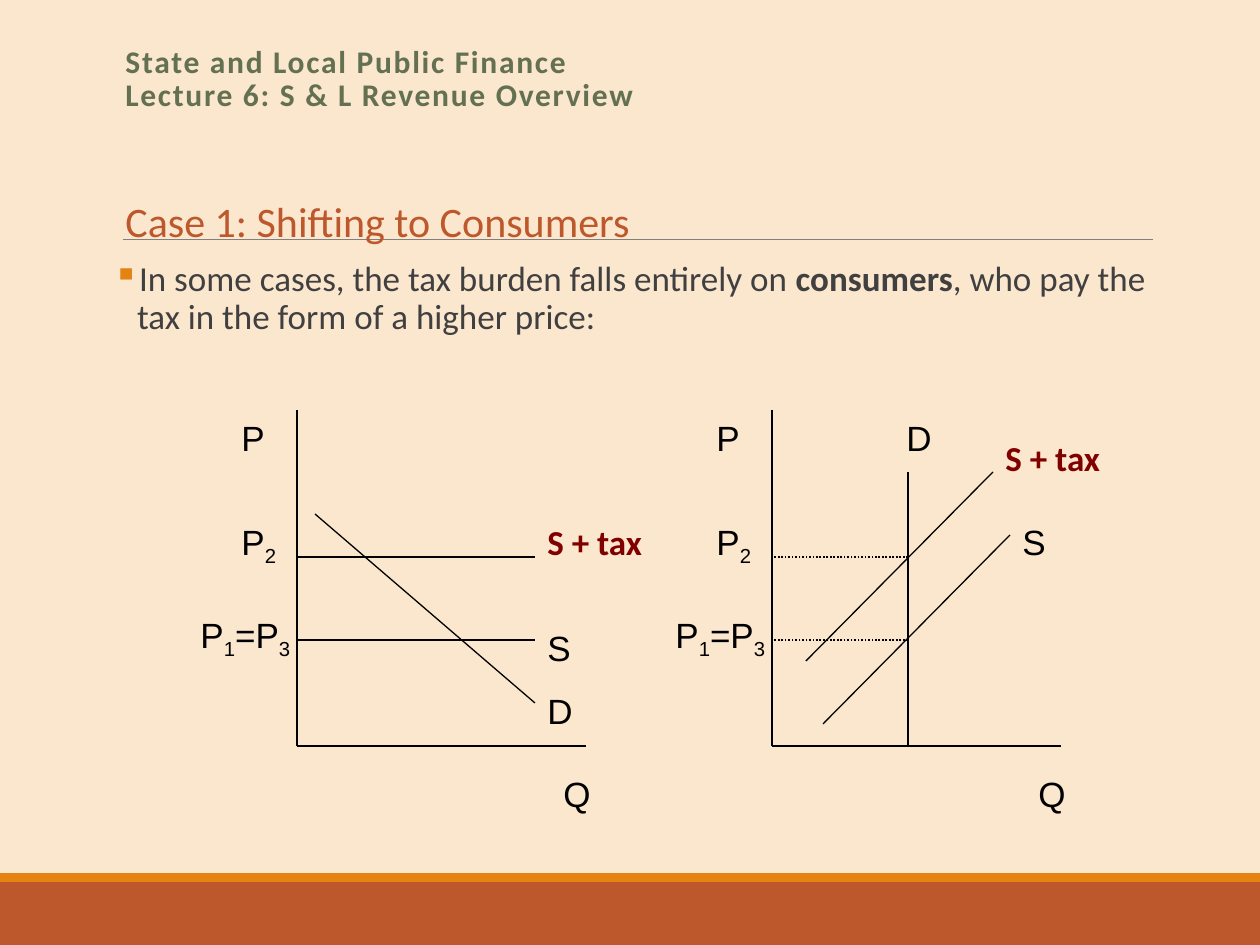
from dataclasses import dataclass

from lxml import etree
from pptx import Presentation
from pptx.dml.color import RGBColor
from pptx.enum import dml, shapes, text
from pptx.oxml import ns
from pptx.util import Emu, Pt

EMU_PER_PX = 914400 / 126
WIDTH, HEIGHT = 1260, 945


@dataclass(frozen=True)
class Theme:
    background: str = "FBE6CE"
    footer: str = "BD582C"
    accent: str = "E48312"
    rule: str = "808080"
    course: str = "637052"
    heading: str = "BD582C"
    body: str = "404040"
    ink: str = "000000"
    tax: str = "800000"
    prose_font: str = "Calibri"
    graph_font: str = "Arial"
    course_size: int = 18
    heading_size: int = 24
    body_size: int = 20
    label_size: int = 20


THEME = Theme()
P1_P3 = [("P", {}), ("1", {"sub": True}), ("=P", {}), ("3", {"sub": True})]
P2 = [("P", {}), ("2", {"sub": True})]


def px(length):
    return Emu(round(length * EMU_PER_PX))


def rgb(value):
    return RGBColor.from_string(value)


def add_band(slide, top, height, color):
    band = slide.shapes.add_shape(
        shapes.MSO_SHAPE.RECTANGLE, 0, px(top), px(WIDTH), px(height))
    band.shadow.inherit = False
    band.fill.solid()
    band.fill.fore_color.rgb = rgb(color)
    band.line.fill.background()


def add_line(slide, start, end, color=THEME.ink, width=0.75, dotted=False):
    line = slide.shapes.add_connector(
        shapes.MSO_CONNECTOR.STRAIGHT, *map(px, (*start, *end)))
    line.line.color.rgb = rgb(color)
    line.line.width = Pt(width)
    if dotted:
        line.line.dash_style = dml.MSO_LINE.ROUND_DOT
    etree.SubElement(line._element.spPr, ns.qn("a:effectLst"))


def add_text(slide, box, runs, size=THEME.label_size, color=THEME.ink,
             font=THEME.graph_font, bold=False, tracking=0, wrap=True,
             line_spacing=None, side_inset=None):
    frame = slide.shapes.add_textbox(*map(px, box)).text_frame
    frame.word_wrap = wrap
    frame.vertical_anchor = text.MSO_ANCHOR.TOP
    if side_inset is not None:
        frame.margin_left = frame.margin_right = px(side_inset)
    paragraph = frame.paragraphs[0]
    if line_spacing:
        paragraph.line_spacing = line_spacing
    for content, style in [(runs, {})] if isinstance(runs, str) else runs:
        for index, words in enumerate(content.split("\n")):
            if index:
                paragraph.add_line_break()
            run = paragraph.add_run()
            run.text = words
            run.font.size = Pt(size)
            run.font.name = font
            run.font.color.rgb = rgb(color)
            run.font.bold = style.get("bold", bold)
            if tracking:
                run._r.get_or_add_rPr().set("spc", str(tracking))
            if style.get("sub"):
                run._r.get_or_add_rPr().set("baseline", "-25000")
    return paragraph


def add_bullet(paragraph, mark, color, indent):
    properties = paragraph._p.get_or_add_pPr()
    properties.set("marL", str(px(indent)))
    properties.set("indent", str(-px(indent)))
    tint = etree.SubElement(properties, ns.qn("a:buClr"))
    etree.SubElement(tint, ns.qn("a:srgbClr")).set("val", color)
    etree.SubElement(properties, ns.qn("a:buChar")).set("char", mark)


def add_tax_label(slide, left, top):
    add_text(slide, (left, top, 136, 64), "S + tax", color=THEME.tax,
             font=THEME.prose_font, bold=True)


def add_axes(slide, origin):
    add_line(slide, (origin, 410), (origin, 746))
    add_line(slide, (origin, 746), (origin + 289, 746))
    add_text(slide, (origin - 68, 410, 50, 84), "P")
    add_text(slide, (origin + 254, 766, 50, 84), "Q")
    add_text(slide, (origin - 68, 514, 68, 63), P2)
    add_text(slide, (origin - 109, 607, 136, 63), P1_P3)


def add_flat_supply_graph(slide, origin):
    add_axes(slide, origin)
    for price in (557, 640):
        add_line(slide, (origin, price), (origin + 238, price))
    add_line(slide, (origin + 18, 514), (origin + 238, 703))
    add_tax_label(slide, origin + 238, 514)
    for name, top in (("S", 620), ("D", 683)):
        add_text(slide, (origin + 238, top, 84, 63), name)


def add_fixed_demand_graph(slide, origin):
    add_axes(slide, origin)
    demand = origin + 136
    add_line(slide, (demand, 472), (demand, 746))
    for price in (557, 640):
        add_line(slide, (demand, price), (origin, price), width=1, dotted=True)
    for left, bottom in ((34, 661), (51, 724)):
        add_line(slide, (origin + left, bottom),
                 (origin + left + 187, bottom - 189))
    add_tax_label(slide, origin + 221, 430)
    add_text(slide, (origin + 238, 514, 84, 63), "S")
    add_text(slide, (origin + 122, 410, 65, 63), "D")


def add_prose(slide):
    add_text(slide, (113, 42, 1040, 82),
             "State and Local Public Finance\nLecture 6: S & L Revenue Overview",
             size=THEME.course_size, color=THEME.course, font=THEME.prose_font,
             bold=True, tracking=100, line_spacing=0.85)
    add_text(slide, (113, 189, 546, 63), "Case 1: Shifting to Consumers",
             size=THEME.heading_size, color=THEME.heading,
             font=THEME.prose_font, wrap=False)
    statement = add_text(
        slide, (113, 255, 1040, 554),
        [("In some cases, the tax burden falls entirely on ", {}),
         ("consumers", {"bold": True}),
         (", who pay the tax in the form of a higher price:", {})],
        size=THEME.body_size, color=THEME.body, font=THEME.prose_font,
        line_spacing=0.9, side_inset=0)
    statement.space_before = Pt(6.8)
    statement.space_after = Pt(1.1)
    add_bullet(statement, "▪", THEME.accent, 24)


def main():
    deck = Presentation()
    deck.slide_width, deck.slide_height = px(WIDTH), px(HEIGHT)
    slide = deck.slides.add_slide(deck.slide_layouts[6])
    slide.background.fill.solid()
    slide.background.fill.fore_color.rgb = rgb(THEME.background)
    add_band(slide, 882, 63, THEME.footer)
    add_band(slide, 873, 9, THEME.accent)
    add_line(slide, (123, 239), (1153, 239), color=THEME.rule, width=0.5)
    add_prose(slide)
    add_flat_supply_graph(slide, 297)
    add_fixed_demand_graph(slide, 772)
    deck.save("out.pptx")


if __name__ == "__main__":
    main()
